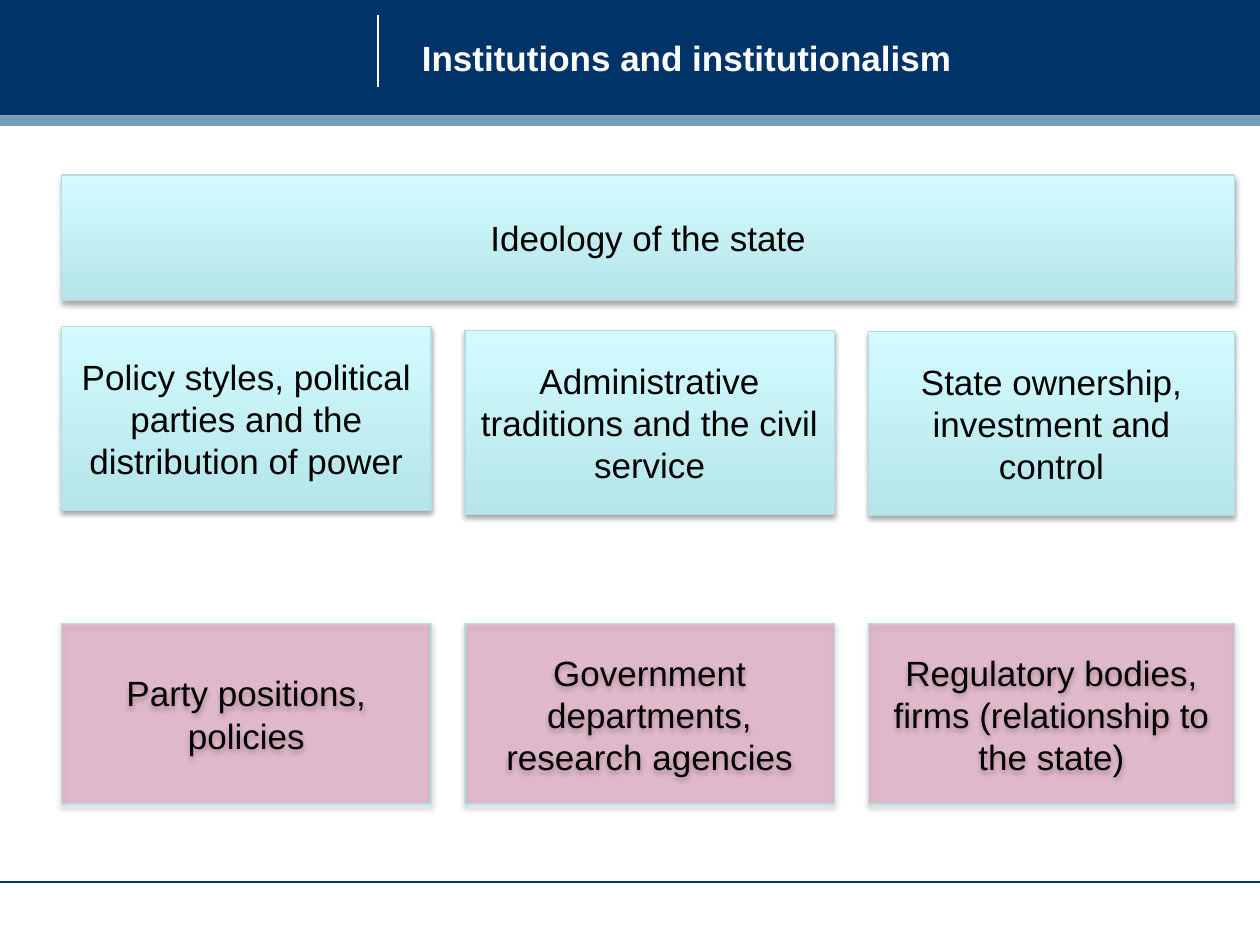
import pptx
import pptx.dml.color
import pptx.enum.shapes
import pptx.enum.text
import pptx.oxml.ns
import pptx.oxml.xmlchemy
import pptx.util

Pt = pptx.util.Pt
FONT = "Arial"
COLORS = {
    "navy": "003368",
    "steel": "759FB8",
    "white": "FFFFFF",
    "black": "000000",
    "aqua_dark": "B5E5E9",
    "aqua_light": "D3FBFF",
    "aqua_line": "B6DCDF",
    "magenta": "B50A59",
}
LEFT, COLUMN_STEP = 35.3, 230.4
COLUMN_WIDTHS = (211, 211, 209.5)
FULL_WIDTH = 2 * COLUMN_STEP + COLUMN_WIDTHS[-1]
INFLUENCES = (
    ("Policy styles, political parties and the distribution of power", 186.5),
    ("Administrative traditions and the civil service", 188.8),
    ("State ownership, investment and control", 189.4),
)
OUTCOMES = (
    "Party positions, policies",
    "Government departments, research agencies",
    "Regulatory bodies, firms (relationship to the state)",
)


def rgb(name):
    return pptx.dml.color.RGBColor.from_string(COLORS[name])


def append_element(parent, tag, **attributes):
    element = pptx.oxml.xmlchemy.OxmlElement(tag)
    for name, value in attributes.items():
        element.set(name, str(value))
    parent.append(element)
    return element


def add_band(slide, top, height, color):
    shape = slide.shapes.add_shape(
        pptx.enum.shapes.MSO_SHAPE.RECTANGLE, 0, Pt(top), Pt(720), Pt(height))
    shape.shadow.inherit = False
    shape.fill.solid()
    shape.fill.fore_color.rgb = rgb(color)
    shape.line.fill.background()


def add_rule(slide, start, end, color):
    points = [Pt(value) for value in start + end]
    connector = slide.shapes.add_connector(
        pptx.enum.shapes.MSO_CONNECTOR.STRAIGHT, *points)
    connector.line.color.rgb = rgb(color)
    connector.line.width = Pt(0.75)
    append_element(connector._element.spPr, "a:effectLst")


def set_text(shape, text, color, bold=False):
    frame = shape.text_frame
    frame.word_wrap = True
    frame.vertical_anchor = pptx.enum.text.MSO_ANCHOR.MIDDLE
    paragraph = frame.paragraphs[0]
    paragraph.text = text
    paragraph.font.name = FONT
    paragraph.font.size = Pt(20)
    paragraph.font.bold = bold
    paragraph.font.color.rgb = rgb(color)
    return paragraph


def add_title(slide, text):
    box = slide.shapes.add_textbox(Pt(234), Pt(5.8), Pt(455.8), Pt(54))
    frame = box.text_frame
    frame.margin_left = frame.margin_right = Pt(7.2)
    frame.margin_top = frame.margin_bottom = Pt(7.2)
    set_text(box, text, "white", bold=True)


def add_shadow(shape):
    shape.shadow.inherit = False
    effects = shape._element.spPr.find(pptx.oxml.ns.qn("a:effectLst"))
    shadow = append_element(effects, "a:outerShdw", blurRad=Pt(3.1),
                            dist=Pt(1.8), dir=90 * 60000, rotWithShape=0)
    color = append_element(shadow, "a:srgbClr", val=COLORS["black"])
    append_element(color, "a:alpha", val=35000)


def fill_gradient(shape):
    shape.fill.gradient()
    shape.fill.gradient_angle = 90
    stops = shape.fill.gradient_stops
    for stop, position, color in zip(stops, (0, 1), ("aqua_dark", "aqua_light")):
        stop.position = position
        stop.color.rgb = rgb(color)


def fill_translucent(shape):
    shape.fill.solid()
    shape.fill.fore_color.rgb = rgb("magenta")
    fill = shape._element.spPr.find(pptx.oxml.ns.qn("a:solidFill"))
    append_element(fill[0], "a:alpha", val=22000)


def add_process(slide, text, left, top, width, height, apply_fill):
    shape = slide.shapes.add_shape(
        pptx.enum.shapes.MSO_SHAPE.FLOWCHART_PROCESS,
        Pt(left), Pt(top), Pt(width), Pt(height))
    apply_fill(shape)
    shape.line.color.rgb = rgb("aqua_line")
    shape.line.width = Pt(0.75)
    add_shadow(shape)
    paragraph = set_text(shape, text, "black")
    paragraph.alignment = pptx.enum.text.PP_ALIGN.CENTER


def main():
    presentation = pptx.Presentation()
    presentation.slide_width = Pt(720)
    presentation.slide_height = Pt(540)
    slide = presentation.slides.add_slide(presentation.slide_layouts[6])

    add_band(slide, 0, 66, "navy")
    add_rule(slide, (216, 8.6), (216, 49.5), "white")
    add_rule(slide, (0, 504), (720, 504), "navy")
    add_band(slide, 66, 6, "steel")
    add_title(slide, "Institutions and institutionalism")

    add_process(slide, "Ideology of the state",
                LEFT, 100, FULL_WIDTH, 71.5, fill_gradient)
    columns = [(LEFT + index * COLUMN_STEP, width)
               for index, width in enumerate(COLUMN_WIDTHS)]
    for (left, width), (text, top) in zip(columns, INFLUENCES):
        add_process(slide, text, left, top, width, 105.2, fill_gradient)
    for (left, width), text in zip(columns, OUTCOMES):
        add_process(slide, text, left, 356.5, width, 103, fill_translucent)

    presentation.save("out.pptx")


if __name__ == "__main__":
    main()
